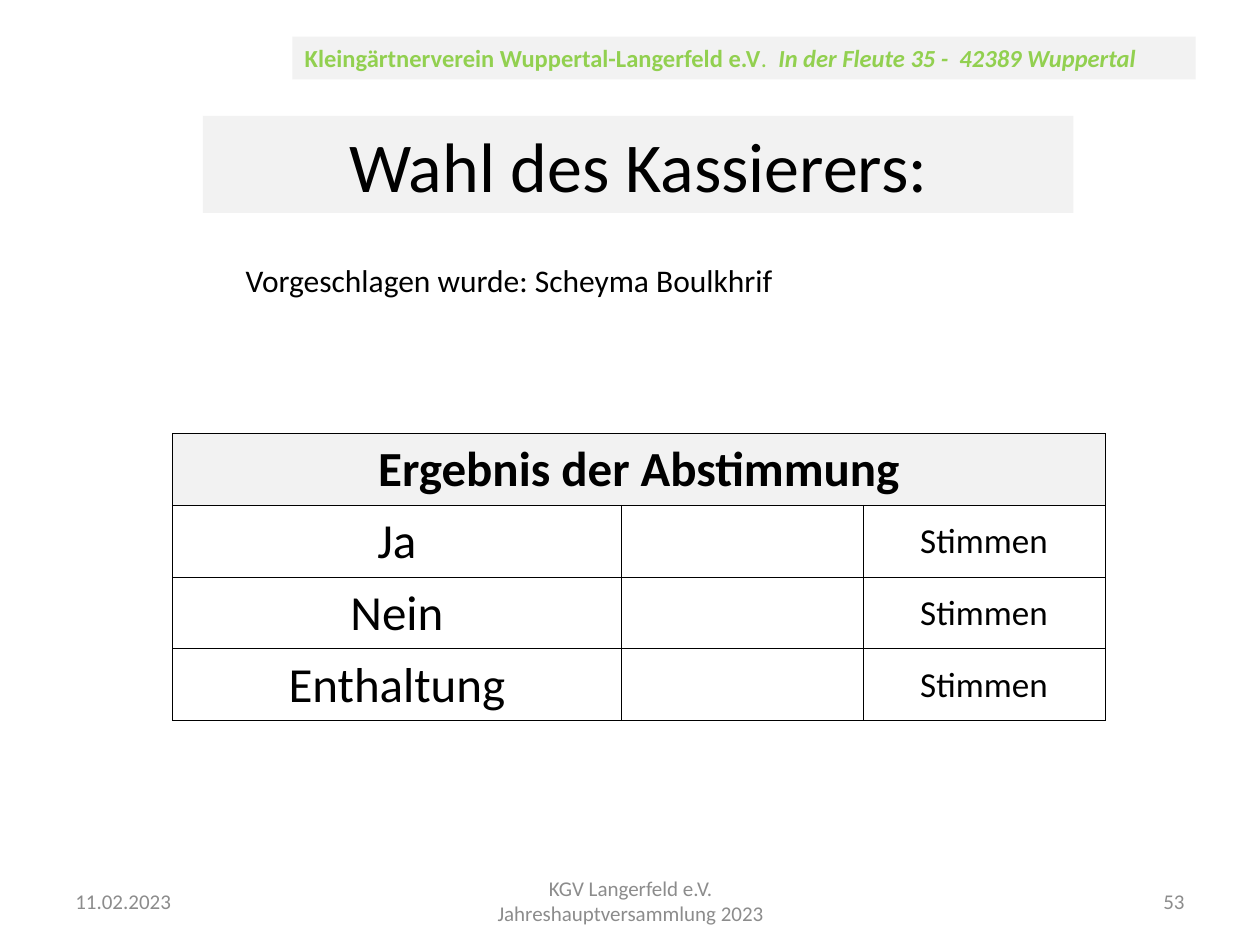
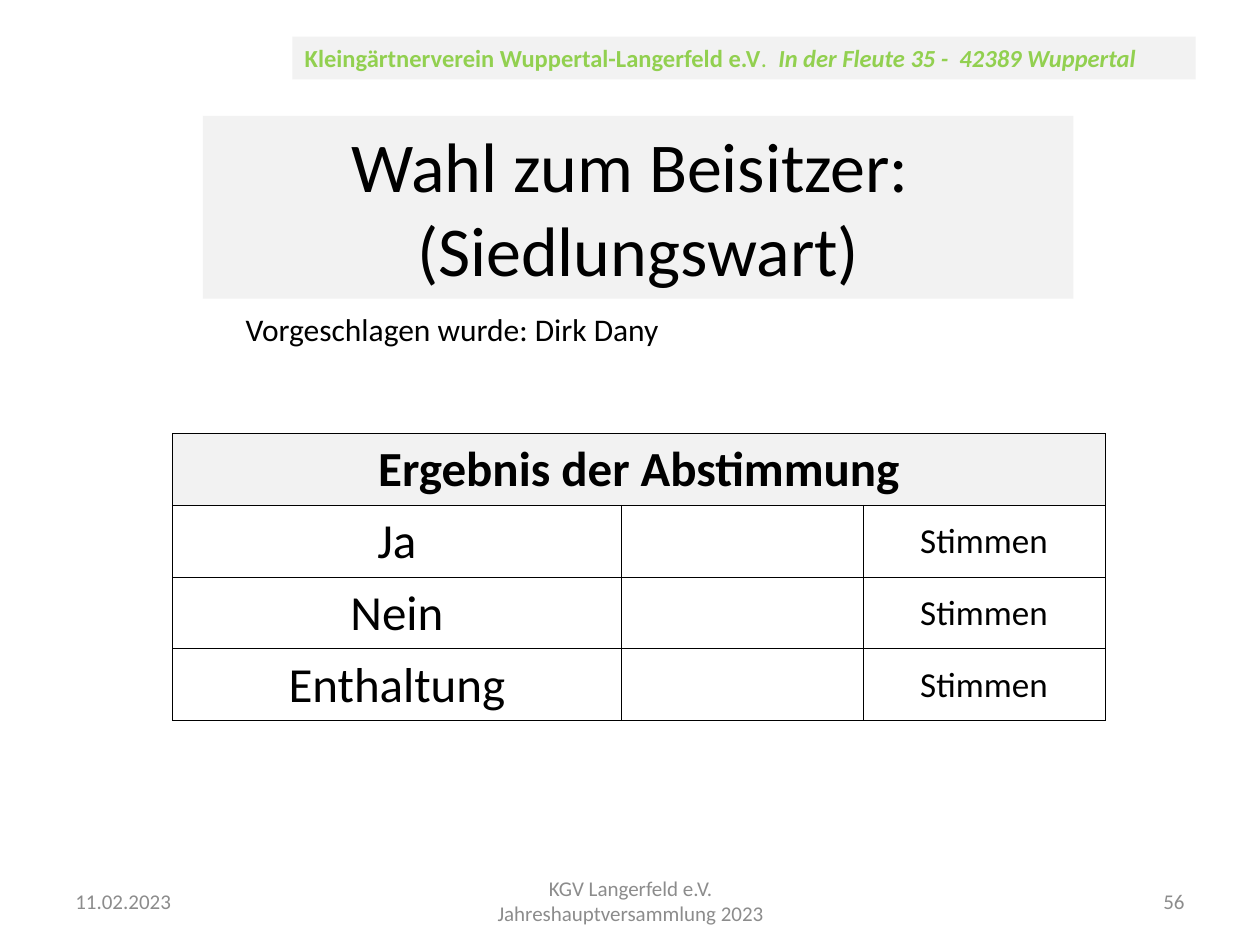
import lxml.etree
import pptx
import pptx.dml.color
import pptx.enum.shapes
import pptx.enum.text
import pptx.oxml.ns
import pptx.util

PX = 9144  # 100 px to the inch
COLORS = {"band": "F2F2F2", "club": "92D050", "footer": "8C8C8C",
          "text": "000000", "page": "FFFFFF"}
ALIGN = pptx.enum.text.PP_ALIGN
ANCHOR = pptx.enum.text.MSO_ANCHOR

CLUB_LINE = [
    ("Kleingärtnerverein Wuppertal-Langerfeld e.V", {"bold": True}),
    (".  ", {"bold": False}),
    ("In der Fleute 35 -  42389 Wuppertal", {"bold": True, "italic": True}),
]
EVENT = "KGV Langerfeld e.V. Jahreshauptversammlung 2023"
DATE = "11.02.2023"
RESULT_TITLE = "Ergebnis der Abstimmung"
CHOICES = ["Ja", "Nein", "Enthaltung"]
UNIT = "Stimmen"

ELECTIONS = [
    {"title": ["Wahl des Kassierers:"], "title_height": 77, "proposal_top": 202,
     "candidate": "Scheyma Boulkhrif", "page": "53"},
    {"title": ["Wahl zum Beisitzer: ", "(Siedlungswart)"], "title_height": 145,
     "proposal_top": 241, "candidate": "Dirk Dany", "page": "56"},
]


def rgb(color):
    return pptx.dml.color.RGBColor.from_string(COLORS[color])


class VotingDeck:
    """Holds the shared style and the slide being filled."""

    font = "Calibri"

    def __init__(self):
        self.presentation = pptx.Presentation()
        self.presentation.slide_width = 1000 * PX
        self.presentation.slide_height = 750 * PX
        self.slide = None

    def new_slide(self):
        self.slide = self.presentation.slides.add_slide(self.presentation.slide_layouts[6])

    def add_text(self, frame, paragraphs, size, color="text", align=ALIGN.LEFT, **style):
        """Fill a frame; each paragraph is a string or a list of (text, style) runs."""
        for index, content in enumerate(paragraphs):
            paragraph = frame.add_paragraph() if index else frame.paragraphs[0]
            paragraph.alignment = align
            runs = [(content, {})] if isinstance(content, str) else content
            for text, run_style in runs:
                run = paragraph.add_run()
                run.text = text
                run.font.color.rgb = rgb(color)
                values = {"name": self.font, "size": pptx.util.Pt(size), **style, **run_style}
                for key, value in values.items():
                    setattr(run.font, key, value)

    def band(self, left, top, width, height, paragraphs, size, **style):
        shape = self.slide.shapes.add_shape(
            pptx.enum.shapes.MSO_SHAPE.RECTANGLE,
            left * PX, top * PX, width * PX, height * PX)
        shape.shadow.inherit = False
        shape.fill.solid()
        shape.fill.fore_color.rgb = rgb("band")
        shape.line.fill.background()
        shape.text_frame.word_wrap = True
        shape.text_frame.vertical_anchor = ANCHOR.TOP
        self.add_text(shape.text_frame, paragraphs, size, **style)

    def label(self, left, top, width, height, text, size, anchor=ANCHOR.TOP, **style):
        box = self.slide.shapes.add_textbox(left * PX, top * PX, width * PX, height * PX)
        box.text_frame.word_wrap = True
        box.text_frame.vertical_anchor = anchor
        self.add_text(box.text_frame, [text], size, **style)

    def footer(self, page):
        for left, width, text, align in [(342, 317, EVENT, ALIGN.CENTER),
                                         (717, 233, page, ALIGN.RIGHT),
                                         (50, 233, DATE, ALIGN.LEFT)]:
            self.label(left, 695, width, 40, text, 12, anchor=ANCHOR.MIDDLE,
                       color="footer", align=align)

    def border(self, cell):
        properties = cell._tc.get_or_add_tcPr()
        for side in ("a:lnL", "a:lnR", "a:lnT", "a:lnB"):
            line = lxml.etree.SubElement(properties, pptx.oxml.ns.qn(side),
                                         w=str(pptx.util.Pt(0.5)))
            fill = lxml.etree.SubElement(line, pptx.oxml.ns.qn("a:solidFill"))
            lxml.etree.SubElement(fill, pptx.oxml.ns.qn("a:srgbClr"), val=COLORS["text"])

    def cell(self, cell, text, size, fill="page", **style):
        self.border(cell)
        cell.fill.solid()
        cell.fill.fore_color.rgb = rgb(fill)
        if text:
            values = {"vertical_anchor": ANCHOR.MIDDLE, "margin_left": PX,
                      "margin_top": PX, "margin_right": PX, "margin_bottom": 0}
            for key, value in values.items():
                setattr(cell, key, value)
            self.add_text(cell.text_frame, [text], size, align=ALIGN.CENTER, **style)

    def result_table(self, left, top, widths, row_height):
        row_count = len(CHOICES) + 1
        table = self.slide.shapes.add_table(
            row_count, len(widths), left * PX, top * PX,
            sum(widths) * PX, row_count * row_height * PX).table
        table.first_row = table.horz_banding = False
        for column, width in zip(table.columns, widths):
            column.width = width * PX
        for row in table.rows:
            row.height = row_height * PX

        table.cell(0, 0).merge(table.cell(0, len(widths) - 1))
        for column, text in enumerate([RESULT_TITLE, "", ""]):
            self.cell(table.cell(0, column), text, 28, fill="band", bold=True)
        for row, choice in enumerate(CHOICES, start=1):
            for column, (text, size) in enumerate([(choice, 28), ("", 20), (UNIT, 20)]):
                self.cell(table.cell(row, column), text, size)

    def election(self, title, title_height, proposal_top, candidate, page):
        self.new_slide()
        self.band(232, 29, 717, 34, [CLUB_LINE], 14, color="club")
        self.footer(page)
        self.band(161, 92, 691, title_height, title, 40, align=ALIGN.CENTER)
        self.label(185, proposal_top, 559, 71, f"Vorgeschlagen wurde: {candidate}", 18)
        self.result_table(137, 344, [356, 192, 192], 57)


def main():
    deck = VotingDeck()
    for election in ELECTIONS:
        deck.election(**election)
    deck.presentation.save("out.pptx")


if __name__ == "__main__":
    main()
